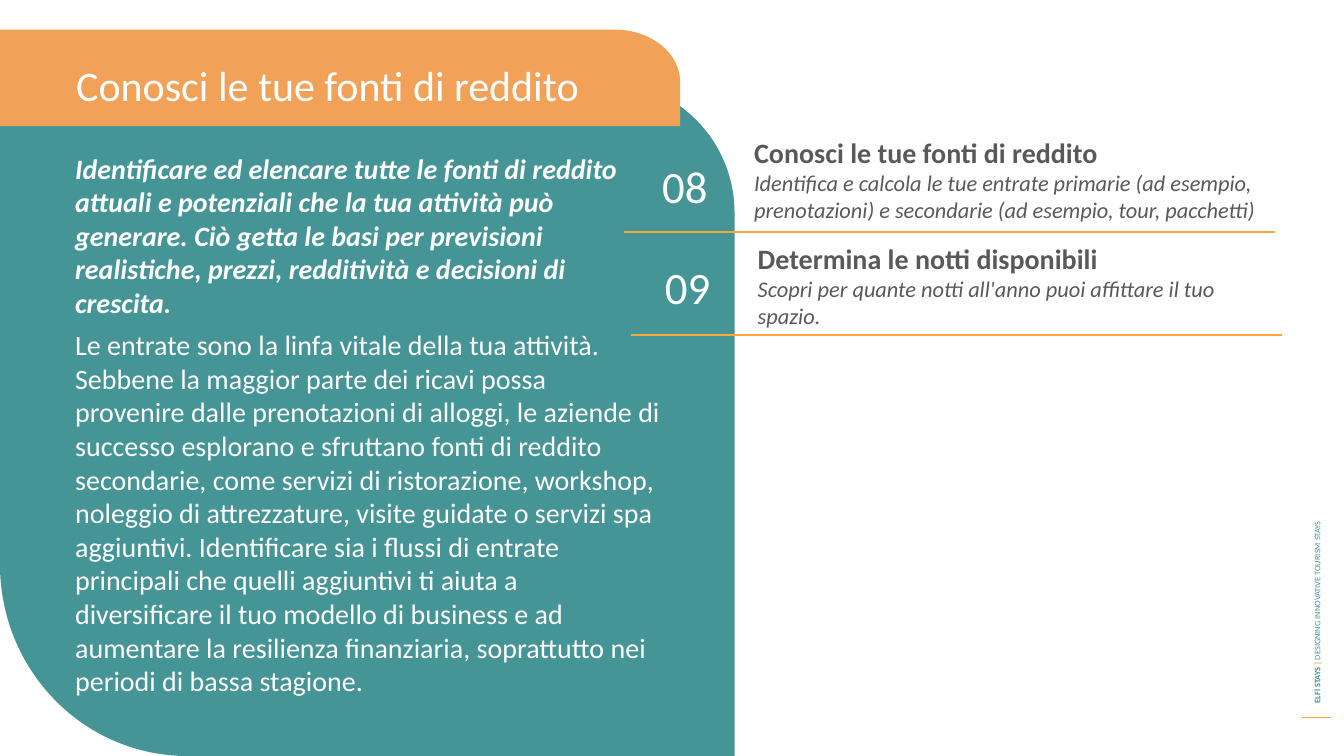
from dataclasses import dataclass

import lxml.etree
import pptx
import pptx.dml.color
import pptx.enum.shapes
import pptx.enum.text
import pptx.oxml.ns
import pptx.util

Pt = pptx.util.Pt
qn = pptx.oxml.ns.qn
Align = pptx.enum.text.PP_ALIGN
Anchor = pptx.enum.text.MSO_ANCHOR
Point = tuple[float, float]

TEAL, ORANGE, AMBER = "459597", "F2A158", "FBA63B"
WHITE, GREY = "FFFFFF", "595959"


@dataclass
class Run:
    text: str
    size: float
    color: str
    bold: bool = False
    italic: bool = False


@dataclass
class TextBox:
    left: float
    top: float
    width: float
    height: float
    paragraphs: list[list[Run]]
    anchor: Anchor = Anchor.MIDDLE
    align: Align = Align.LEFT
    space_after: float = 0
    rotation: float = 0


@dataclass
class Outline:
    color: str
    start: Point
    # One point is a straight line, three points are a Bézier curve
    segments: list[list[Point]]


@dataclass
class Rule:
    left: float
    right: float
    y: float
    width: float


@dataclass
class Topic:
    number: str
    title: str
    summary: str
    number_left: float
    number_top: float
    text_left: float
    text_top: float
    rule: Rule


def rgb(color: str) -> pptx.dml.color.RGBColor:
    return pptx.dml.color.RGBColor.from_string(color)


def bend_curves(shape, segments: list[list[Point]]) -> None:
    """Join the three lines of each curved segment into one Bézier curve."""
    lines = iter(list(shape._element.iter(qn("a:lnTo"))))
    for segment in segments:
        first, *others = [next(lines) for _ in segment]
        if others:
            bezier = lxml.etree.Element(qn("a:cubicBezTo"))
            first.addprevious(bezier)
            for line in (first, *others):
                bezier.append(line[0])
                line.getparent().remove(line)


def draw_outline(slide, outline: Outline) -> None:
    points = [(Pt(x), Pt(y)) for segment in outline.segments for x, y in segment]
    builder = slide.shapes.build_freeform(*map(Pt, outline.start))
    builder.add_line_segments(points, close=True)
    shape = builder.convert_to_shape()
    bend_curves(shape, outline.segments)
    shape.shadow.inherit = False
    shape.fill.solid()
    shape.fill.fore_color.rgb = rgb(outline.color)
    shape.line.fill.background()


def draw_rule(slide, rule: Rule) -> None:
    connector = slide.shapes.add_connector(
        pptx.enum.shapes.MSO_CONNECTOR.STRAIGHT,
        Pt(rule.left), Pt(rule.y), Pt(rule.right), Pt(rule.y))
    connector.line.color.rgb = rgb(AMBER)
    connector.line.width = Pt(rule.width)
    lxml.etree.SubElement(connector._element.spPr, qn("a:effectLst"))


def draw_text(slide, box: TextBox) -> None:
    shape = slide.shapes.add_textbox(
        Pt(box.left), Pt(box.top), Pt(box.width), Pt(box.height))
    shape.rotation = box.rotation
    frame = shape.text_frame
    frame.word_wrap = True
    frame.vertical_anchor = box.anchor
    for index, runs in enumerate(box.paragraphs):
        paragraph = frame.add_paragraph() if index else frame.paragraphs[0]
        paragraph.alignment = box.align
        paragraph.space_after = Pt(box.space_after)
        for item in runs:
            run = paragraph.add_run()
            run.text = item.text
            formats = {"name": "Calibri", "size": Pt(item.size),
                       "bold": item.bold, "italic": item.italic}
            for name, value in formats.items():
                setattr(run.font, name, value)
            run.font.color.rgb = rgb(item.color)


def draw_topic(slide, topic: Topic) -> None:
    draw_text(slide, TextBox(topic.number_left, topic.number_top, 55.5, 54,
                             [[Run(topic.number, 32, WHITE)]], align=Align.CENTER))
    draw_text(slide, TextBox(topic.text_left, topic.text_top, 388, 71,
                             [[Run(topic.title, 20, GREY, bold=True)],
                              [Run(topic.summary, 16, GREY, italic=True)]],
                             anchor=Anchor.TOP))
    draw_rule(slide, topic.rule)


HEADING = "Conosci le tue fonti di reddito"

OUTLINES = [
    Outline(TEAL, (524.7, 540), [
        [(134, 540)], [(60, 540), (0, 479), (0, 403)], [(0, 59)],
        [(433.5, 59)], [(484, 59), (524.7, 101), (524.7, 152)]]),
    Outline(ORANGE, (-1.5, 21.2), [
        [(439.5, 21.2)], [(465, 21.2), (485.8, 38), (485.8, 58.5)], [(485.8, 90)],
        [(0, 90)], [(0, 34.5)], [(0, 32), (0, 29.5), (0, 26.5)]]),
]

TEXTS = [
    # Side label
    TextBox(733, 294.5, 415.5, 14.5, [[
        Run("ELFI STAYS ", 6, TEAL, bold=True), Run("| ", 6, AMBER, bold=True),
        Run("DESIGNING INNOVATIVE TOURISM STAYS", 6, TEAL)]], rotation=270),
    # Body
    TextBox(46.6, 104.4, 432.5, 368, [
        [Run("Identificare ed elencare tutte le fonti di reddito attuali e potenziali "
             "che la tua attività può generare. Ciò getta le basi per previsioni "
             "realistiche, prezzi, redditività e decisioni di crescita.",
             20, WHITE, bold=True, italic=True)],
        [Run("Le entrate sono la linfa vitale della tua attività. Sebbene la maggior "
             "parte dei ricavi possa provenire dalle prenotazioni di alloggi, le aziende "
             "di successo esplorano e sfruttano fonti di reddito secondarie, come servizi "
             "di ristorazione, workshop, noleggio di attrezzature, visite guidate o "
             "servizi spa aggiuntivi. Identificare sia i flussi di entrate principali che "
             "quelli aggiuntivi ti aiuta a diversificare il tuo modello di business e ad "
             "aumentare la resilienza finanziaria, soprattutto nei periodi di bassa "
             "stagione.", 20, WHITE)],
    ], anchor=Anchor.TOP, space_after=6),
    # Heading
    TextBox(47.3, 31.7, 396.7, 57, [[Run(HEADING, 30, WHITE)]]),
]

TOPICS = [
    Topic("08", HEADING,
          "Identifica e calcola le tue entrate primarie (ad esempio, prenotazioni) "
          "e secondarie (ad esempio, tour, pacchetti)",
          461.5, 105.4, 531.6, 93, Rule(445.7, 910.4, 165.6, 1.5)),
    Topic("09", "Determina le notti disponibili",
          "Scopri per quante notti all'anno puoi affittare il tuo spazio.",
          463.4, 177.5, 534.2, 169.1, Rule(451, 915.7, 239, 1.5)),
]


def main() -> None:
    presentation = pptx.Presentation()
    presentation.slide_width, presentation.slide_height = Pt(960), Pt(540)
    slide = presentation.slides.add_slide(presentation.slide_layouts[6])
    # Background panels and side line
    for outline in OUTLINES:
        draw_outline(slide, outline)
    draw_rule(slide, Rule(930.2, 951, 512.6, 0.75))
    # Left text and numbered topics
    for box in TEXTS:
        draw_text(slide, box)
    for topic in TOPICS:
        draw_topic(slide, topic)
    presentation.save("out.pptx")


if __name__ == "__main__":
    main()
